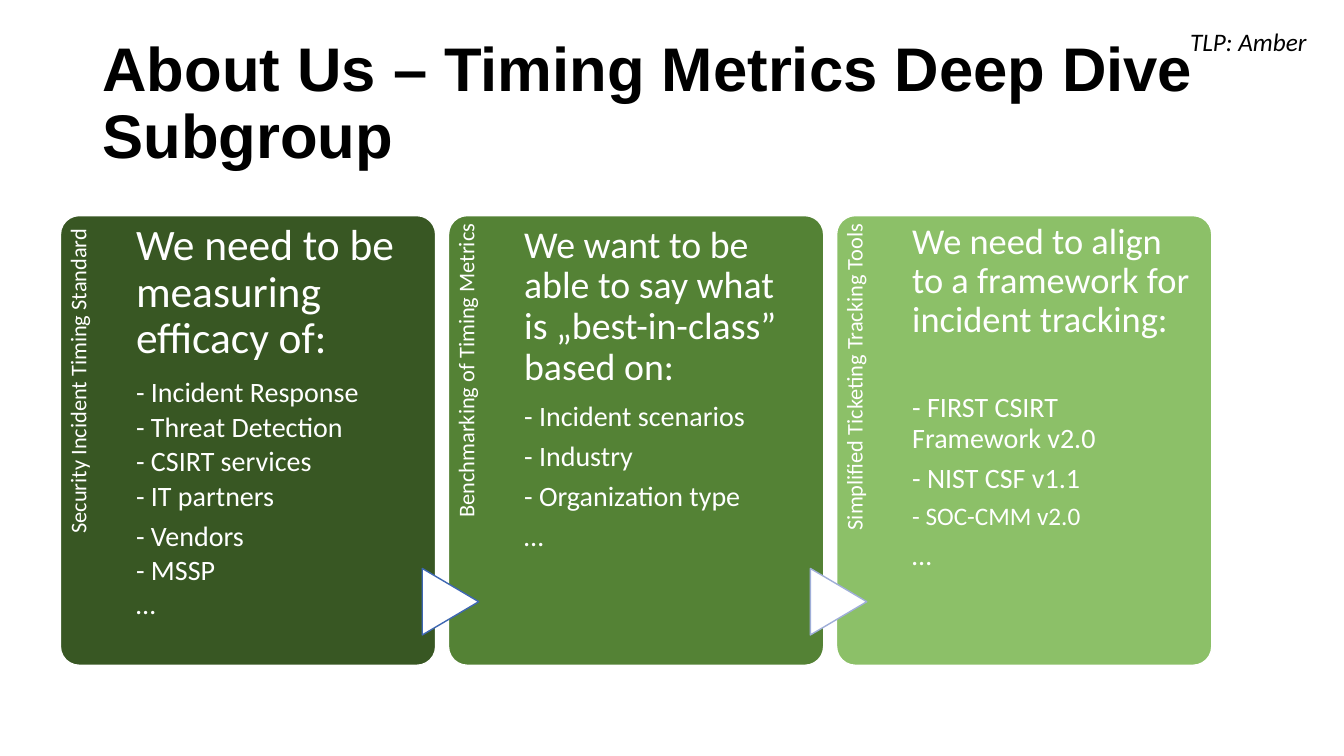
from pptx import Presentation
from pptx.dml.color import RGBColor
from pptx.enum import shapes, text
from pptx.util import Pt

COLORS = {"dark": "385723", "mid": "548235", "light": "8CC068",
          "white": "FFFFFF", "black": "000000"}
TITLE = "About Us – Timing Metrics Deep Dive Subgroup"
MARKING = "TLP: Amber"
WIDE, NARROW = 7, 3  # space after an item

# items: (text, size, space after)
CARDS = [
    {"fill": "dark", "arrow": None, "inset": 5,
     "label": "Security Incident Timing Standard ",
     "heading": ("We need to be measuring efficacy of:", 31, 10.85),
     "items": [("- Incident Response", 20, NARROW),
               ("- Threat Detection", 20, NARROW),
               ("- CSIRT services", 20, NARROW),
               ("- IT partners", 20, WIDE),
               ("- Vendors", 20, NARROW),
               ("- MSSP", 20, NARROW),
               ("…", 20, NARROW)]},
    {"fill": "mid", "arrow": "3E67B2", "inset": 7,
     "label": "Benchmarking of Timing Metrics",
     "heading": ("We want to be able to say what is „best-in-class” based on:",
                 27, 9.45),
     "items": [("- Incident scenarios", 20, WIDE),
               ("- Industry", 20, WIDE),
               ("- Organization type", 20, WIDE),
               ("…", 20, WIDE)]},
    {"fill": "light", "arrow": "9FAED8", "inset": 5,
     "label": "Simplified Ticketing Tracking Tools",
     "heading": ("We need to align to a framework for incident tracking:",
                 26, 38),
     "items": [("- FIRST CSIRT Framework v2.0", 20, WIDE),
               ("- NIST CSF v1.1", 20, WIDE),
               ("- SOC-CMM v2.0", 18, WIDE),
               ("…", 20, WIDE)]},
]

LEFT, TOP, PITCH = 43.2, 154, 277.2
CARD_W, CARD_H = 268, 321.2
LABEL_W, LABEL_H, LABEL_X, LABEL_Y = 263.5, 53.6, 27.2, 285.8  # centre
BODY_X, BODY_W = 54, 199.4
ARROW_W, ARROW_H, ARROW_X, ARROW_Y = 47.5, 40.3, 1.4, 429.8  # centre


def rgb(hex_color):
    return RGBColor.from_string(hex_color)


def set_all(obj, **values):
    for name, value in values.items():
        setattr(obj, name, value)


def centered(x, y, w, h):
    """Box of the given size around the point x, y."""
    return x - w / 2, y - h / 2, w, h


def add_shape(slide, kind, box, fill, line):
    sp = slide.shapes.add_shape(kind, *map(Pt, box))
    sp.shadow.inherit = False
    sp.fill.solid()
    sp.fill.fore_color.rgb = rgb(fill)
    sp.line.color.rgb = rgb(line)
    sp.line.width = Pt(1)
    return sp


def fill_text(tf, lines, color, font="Calibri", spacing=0.9, align=None,
              **style):
    """Write (text, size, space after) lines into a text frame."""
    for i, (line, size, after) in enumerate(lines):
        p = tf.paragraphs[0] if i == 0 else tf.add_paragraph()
        set_all(p, line_spacing=spacing, space_before=Pt(0),
                space_after=Pt(after), alignment=align)
        r = p.add_run()
        r.text = line
        set_all(r.font, name=font, size=Pt(size), **style)
        r.font.color.rgb = rgb(COLORS[color])


def add_text(slide, box, lines, insets, **style):
    sp = slide.shapes.add_textbox(*map(Pt, box))
    left, top, right, bottom = map(Pt, insets)
    set_all(sp.text_frame, word_wrap=True, margin_left=left, margin_top=top,
            margin_right=right, margin_bottom=bottom)
    fill_text(sp.text_frame, lines, **style)
    return sp


def add_card(slide, x, card):
    sp = add_shape(slide, shapes.MSO_SHAPE.ROUNDED_RECTANGLE,
                   (x, TOP, CARD_W, CARD_H),
                   COLORS[card["fill"]], COLORS["white"])
    sp.adjustments[0] = 0.05
    label = add_text(slide,
                     centered(x + LABEL_X, LABEL_Y, LABEL_W, LABEL_H),
                     [(card["label"], 16, 0)], (0, 4.3, 5.8, 0),
                     color="white", align=text.PP_ALIGN.RIGHT)
    label.rotation = 270
    if card["arrow"]:
        arrow = add_shape(slide, shapes.MSO_SHAPE.FLOWCHART_EXTRACT,
                          centered(x + ARROW_X, ARROW_Y, ARROW_W, ARROW_H),
                          COLORS["white"], card["arrow"])
        arrow.rotation = 90
    add_text(slide, (x + BODY_X, TOP, BODY_W, CARD_H),
             [card["heading"], *card["items"]], (0, card["inset"], 0, 0),
             color="white")


def main():
    prs = Presentation()
    set_all(prs, slide_width=Pt(960), slide_height=Pt(540))
    slide = prs.slides.add_slide(prs.slide_layouts[5])

    for i, card in enumerate(CARDS):
        add_card(slide, LEFT + i * PITCH, card)

    title = slide.shapes.title
    set_all(title, left=Pt(66), top=Pt(16.6), width=Pt(828), height=Pt(116.6))
    set_all(title.text_frame, word_wrap=True,
            vertical_anchor=text.MSO_ANCHOR.MIDDLE,
            auto_size=text.MSO_AUTO_SIZE.NONE)
    fill_text(title.text_frame, [(TITLE, 44, 0)], "black", font="Arial",
              align=text.PP_ALIGN.LEFT, bold=True)

    marking = add_text(slide, (843, 15.2, 101, 29), [(MARKING, 18, 0)],
                       (7.2, 3.6, 7.2, 3.6), color="black", spacing=1,
                       italic=True)
    set_all(marking.text_frame, word_wrap=False,
            auto_size=text.MSO_AUTO_SIZE.SHAPE_TO_FIT_TEXT)

    prs.save("out.pptx")


if __name__ == "__main__":
    main()
